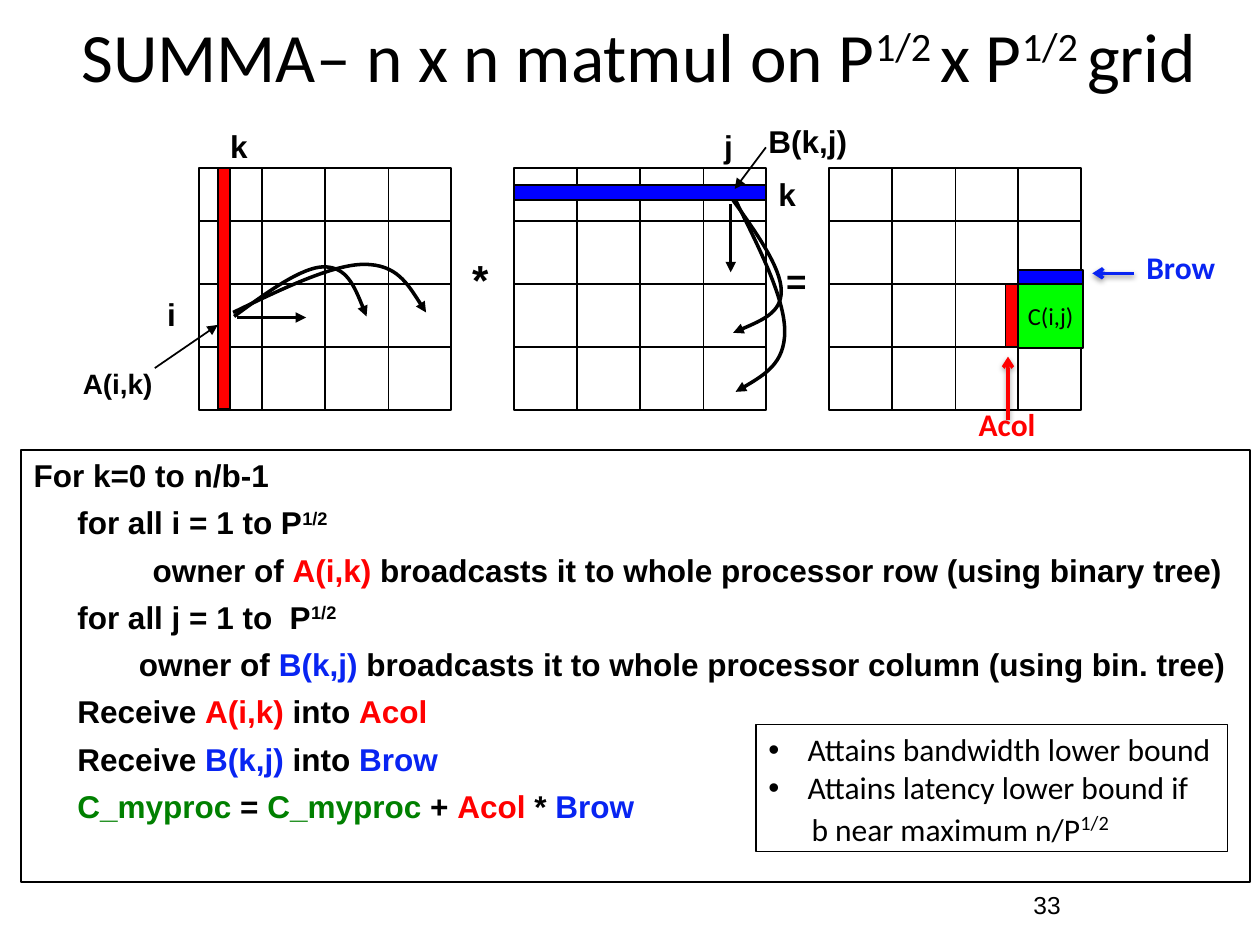
from lxml import etree
from pptx import Presentation
from pptx.dml.color import RGBColor
from pptx.enum.shapes import MSO_CONNECTOR, MSO_SHAPE
from pptx.enum.text import MSO_ANCHOR, MSO_AUTO_SIZE, PP_ALIGN
from pptx.oxml.ns import qn
from pptx.util import Cm, Pt

STRAIGHT = MSO_CONNECTOR.STRAIGHT
RECT = MSO_SHAPE.RECTANGLE
MIDDLE, TOP = MSO_ANCHOR.MIDDLE, MSO_ANCHOR.TOP
CENTER, LEFT = PP_ALIGN.CENTER, PP_ALIGN.LEFT
NO_AUTOSIZE = MSO_AUTO_SIZE.NONE

BLACK = RGBColor(0x00, 0x00, 0x00)
RED = RGBColor(0xFF, 0x00, 0x00)
BLUE = RGBColor(0x00, 0x00, 0xFF)
LIME = RGBColor(0x00, 0xFF, 0x00)
GREEN = RGBColor(0x00, 0x80, 0x00)
ROYAL = RGBColor(0x08, 0x24, 0xF2)
SUP = "superscript"

prs = Presentation()
prs.slide_width, prs.slide_height = Cm(25.4), Cm(19.05)
s = prs.slides.add_slide(prs.slide_layouts[5])


def add_runs(p, runs, size, font="Arial", bold=False):
    """Each run is (text, colour), or (text, SUP) for a black superscript."""
    for text, look in runs:
        r = p.add_run()
        r.text = text
        r.font.size, r.font.name, r.font.bold = Pt(size), font, bold
        r.font.color.rgb = BLACK if look == SUP else look
        if look == SUP:
            r._r.get_or_add_rPr().set("baseline", "30000")


def add_line(x1, y1, x2, y2, color=BLACK, width=1, head=None):
    """Draw a straight line, with an arrowhead at its end if one is named."""
    c = s.shapes.add_connector(STRAIGHT, Cm(x1), Cm(y1), Cm(x2), Cm(y2))
    c.line.color.rgb, c.line.width = color, Pt(width)
    if head:
        etree.SubElement(c.line._get_or_add_ln(), qn("a:tailEnd"), type=head)
    etree.SubElement(c._element.spPr, qn("a:effectLst"))
    return c


# Title
title = s.shapes.title
title.left, title.top, title.width, title.height = Cm(1.07), Cm(0.51), Cm(23.93), Cm(1.17)
tf = title.text_frame
tf.auto_size, tf.vertical_anchor = NO_AUTOSIZE, MIDDLE
tf.paragraphs[0].alignment = CENTER
add_runs(tf.paragraphs[0], [("SUMMA– n x n matmul on P", BLACK), ("1/2 ", SUP),
                            ("x P", BLACK), ("1/2 ", SUP), ("grid ", BLACK)], 39.6, "Calibri")

# Three 4 x 4 processor grids
GRID_TOP, GRID_H, SIDE, CELL = 3.39, 4.87, 5.08, 1.27
for i in range(3):
    left = 4.02 + 6.35 * i
    sp = s.shapes.add_shape(RECT, Cm(left), Cm(GRID_TOP), Cm(SIDE), Cm(GRID_H))
    sp.shadow.inherit = False
    sp.fill.background()
    sp.line.color.rgb, sp.line.width = BLACK, Pt(1)
    for j in range(3):
        y = 4.45 + CELL * j
        x = left + CELL * (j + 1)
        add_line(left, y, left + SIDE, y)
        c = add_line(x, GRID_TOP, x, GRID_TOP + GRID_H)
        if j == 1:
            c.begin_connect(sp, 0)
            c.end_connect(sp, 2)

# Highlighted column, row and result block
for x, y, w, h, color, text in [
    (4.39, 3.4, 0.25, 4.85, RED, ""),
    (10.37, 3.73, 5.08, 0.3, BLUE, ""),
    (20.53, 5.72, 1.3, 1.3, LIME, "C(i,j)"),
    (20.53, 5.44, 1.3, 0.28, BLUE, ""),
    (20.27, 5.72, 0.25, 1.27, RED, ""),
]:
    sp = s.shapes.add_shape(RECT, Cm(x), Cm(y), Cm(w), Cm(h))
    sp.shadow.inherit = False
    sp.fill.solid()
    sp.fill.fore_color.rgb = color
    sp.line.color.rgb, sp.line.width = BLACK, Pt(1)
    if text:
        tf = sp.text_frame
        tf.word_wrap, tf.vertical_anchor = False, MIDDLE
        tf.paragraphs[0].alignment = CENTER
        add_runs(tf.paragraphs[0], [(text, BLACK)], 14, "Calibri")

# Straight arrows
add_line(3.12, 7.42, 4.39, 6.55, head="triangle")
add_line(15.44, 2.97, 14.81, 3.81, head="triangle")
add_line(4.78, 6.4, 6.17, 6.4, width=2, head="triangle")
add_line(14.73, 4.11, 14.73, 5.49, width=2, head="triangle")
for x1, y1, x2, y2, color in [(22.86, 5.51, 22.02, 5.51, ROYAL), (20.32, 8.46, 20.32, 7.19, RED)]:
    c = add_line(x1, y1, x2, y2, color, 2, "arrow")
    shadow = etree.SubElement(c._element.spPr.find(qn("a:effectLst")), qn("a:outerShdw"),
                              blurRad=str(Pt(3.1)), dist=str(Pt(1.6)), dir="5400000")
    black = etree.SubElement(shadow, qn("a:srgbClr"), val="000000")
    etree.SubElement(black, qn("a:alpha"), val="38000")

# Curved broadcast arrows: a start point, then two cubic segments of three points
for points in [
    [(4.72, 6.38), (5.41, 5.87), (6.1, 5.38), (6.53, 5.38), (6.99, 5.38), (7.19, 5.87), (7.39, 6.38)],
    [(4.7, 6.3), (5.69, 5.82), (6.71, 5.33), (7.34, 5.33), (8, 5.33), (8.28, 5.82), (8.59, 6.3)],
    [(14.78, 4.04), (15.27, 4.72), (15.75, 5.41), (15.75, 5.87), (15.75, 6.3), (15.27, 6.5), (14.78, 6.71)],
    [(14.83, 4.04), (15.32, 5.03), (15.82, 6.02), (15.82, 6.68), (15.82, 7.32), (15.32, 7.62), (14.83, 7.9)],
]:
    emu = [(Cm(x), Cm(y)) for x, y in points]
    builder = s.shapes.build_freeform(*emu[0])
    builder.add_line_segments(emu[1:], close=False)
    sp = builder.convert_to_shape()
    sp.shadow.inherit = False
    sp.fill.background()
    sp.line.color.rgb, sp.line.width = BLACK, Pt(2)
    etree.SubElement(sp.line._get_or_add_ln(), qn("a:tailEnd"), type="triangle")
    segments = list(sp._element.iter(qn("a:lnTo")))
    outline = segments[0].getparent()
    for k in range(0, len(segments), 3):
        curve = etree.SubElement(outline, qn("a:cubicBezTo"))
        for seg in segments[k:k + 3]:
            curve.append(seg[0])
            outline.remove(seg)

# Labels and page number
for text, x, y, w, h, size, font, color, bold, align, anchor in [
    ("*", 9.27, 4.98, 0.84, 1.27, 24, "Arial", BLACK, True, LEFT, TOP),
    ("=", 15.6, 5.11, 0.9, 1.12, 20, "Arial", BLACK, True, LEFT, TOP),
    ("i", 3.12, 5.82, 0.69, 1.02, 18, "Arial", BLACK, True, LEFT, TOP),
    ("j", 14.35, 2.44, 0.69, 1.02, 18, "Arial", BLACK, True, LEFT, TOP),
    ("A(i,k)", 1.42, 7.26, 1.93, 0.94, 16, "Arial", BLACK, True, LEFT, TOP),
    ("k", 4.39, 2.44, 0.86, 1.02, 18, "Arial", BLACK, True, LEFT, TOP),
    ("k", 15.44, 3.4, 0.86, 1.02, 18, "Arial", BLACK, True, LEFT, TOP),
    ("B(k,j)", 15.24, 2.34, 2.11, 1.02, 18, "Arial", BLACK, True, LEFT, TOP),
    ("Brow", 22.86, 4.88, 1.93, 1.02, 18, "Calibri", ROYAL, True, LEFT, TOP),
    ("Acol", 19.48, 8.05, 1.68, 1.02, 18, "Calibri", RED, True, LEFT, TOP),
    ("33", 18.47, 17.6, 5.28, 1.27, 14, "Arial", BLACK, False, CENTER, MIDDLE),
]:
    tf = s.shapes.add_textbox(Cm(x), Cm(y), Cm(w), Cm(h)).text_frame
    tf.word_wrap, tf.vertical_anchor = False, anchor
    tf.paragraphs[0].alignment = align
    add_runs(tf.paragraphs[0], [(text, color)], size, font, bold)

# Algorithm: indent in cm and runs of each line
box = s.shapes.add_textbox(Cm(0.43), Cm(9.07), Cm(24.77), Cm(8.71))
box.line.color.rgb, box.line.width = BLACK, Pt(1)
tf = box.text_frame
tf.word_wrap = True
for i, (indent, runs) in enumerate([
    (0, [("For k=0 to n/b-1", BLACK)]),
    (0.88, [("for all i = 1 to P", BLACK), ("1/2", SUP)]),
    (2.4, [("owner of ", BLACK), ("A(i,k)", RED),
           (" broadcasts it to whole processor row (using binary tree)", BLACK)]),
    (0.88, [("for all j = 1 to  P", BLACK), ("1/2", SUP)]),
    (2.12, [("owner of ", BLACK), ("B(k,j)", ROYAL),
            (" broadcasts it to whole processor column (using bin. tree)", BLACK)]),
    (0.88, [("Receive ", BLACK), ("A(i,k)", RED), (" into ", BLACK), ("Acol", RED)]),
    (0.88, [("Receive ", BLACK), ("B(k,j)", ROYAL), (" into ", BLACK), ("Brow", ROYAL)]),
    (0.88, [("C_myproc", GREEN), (" = ", BLACK), ("C_myproc", GREEN), (" + ", BLACK),
            ("Acol", RED), (" * ", BLACK), ("Brow", ROYAL)]),
]):
    p = tf.paragraphs[0] if i == 0 else tf.add_paragraph()
    p.space_before = Pt(5.4) if i else Pt(1.5)
    p._p.get_or_add_pPr().set("marL", str(Cm(indent)))
    add_runs(p, runs, 18, bold=True)

# Lower bounds box
box = s.shapes.add_textbox(Cm(15.24), Cm(14.6), Cm(9.5), Cm(2.57))
box.line.color.rgb, box.line.width = BLACK, Pt(0.75)
tf = box.text_frame
tf.word_wrap = False
for i, text in enumerate(["Attains bandwidth lower bound", "Attains latency lower bound if",
                          "b near maximum n/P"]):
    p = tf.paragraphs[0] if i == 0 else tf.add_paragraph()
    pPr = p._p.get_or_add_pPr()
    pPr.set("marL", str(Cm(0.79 if i < 2 else 0.87)))
    if i < 2:
        pPr.set("indent", str(Cm(-0.79)))
        etree.SubElement(pPr, qn("a:buFont"), typeface="Arial")
        etree.SubElement(pPr, qn("a:buChar"), char="•")
    add_runs(p, [(text, BLACK)], 18, "Calibri")
add_runs(p, [("1/2", SUP)], 20, "Calibri")

prs.save("out.pptx")
